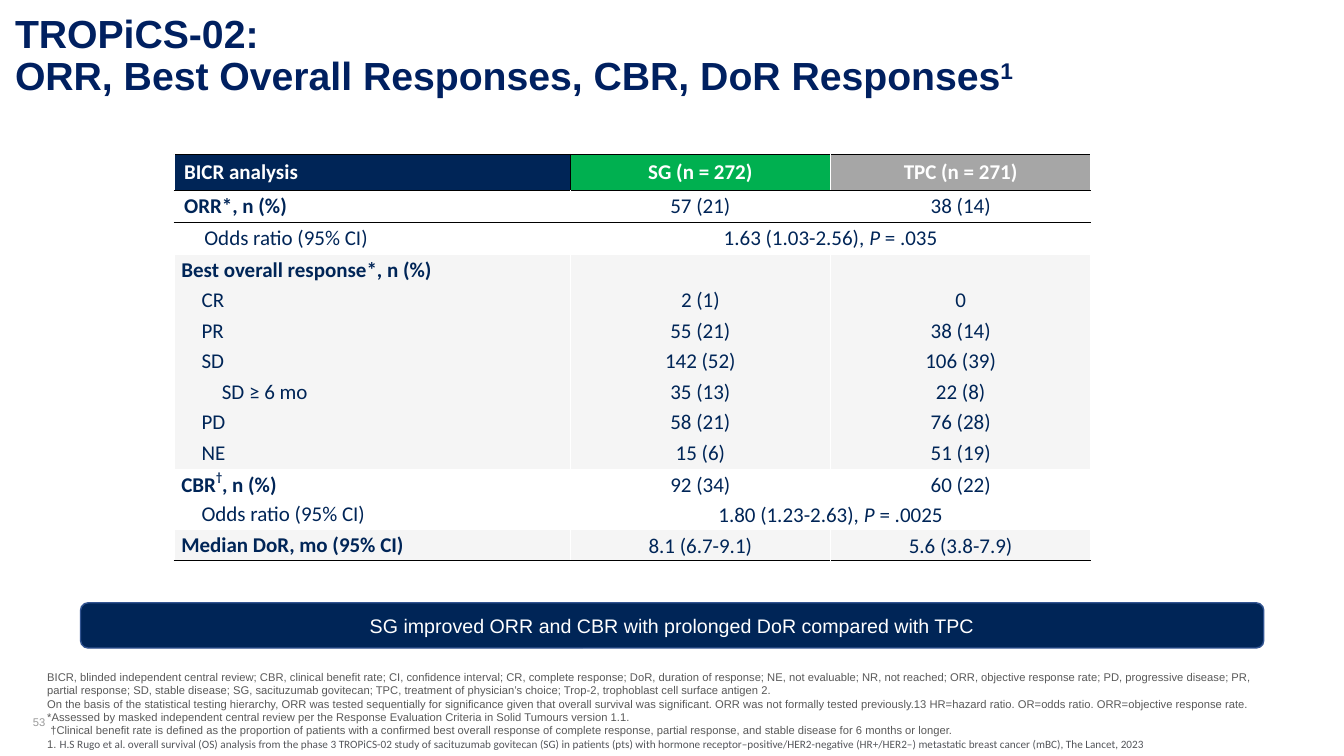
from lxml.etree import SubElement
from pptx import Presentation
from pptx.dml.color import RGBColor
from pptx.enum.shapes import MSO_SHAPE
from pptx.enum.text import MSO_ANCHOR, PP_ALIGN
from pptx.oxml.ns import qn
from pptx.util import Cm, Pt

NAVY = RGBColor(0x00, 0x25, 0x57)
TITLE_BLUE = RGBColor(0x00, 0x20, 0x60)
OUTLINE_BLUE = RGBColor(0x32, 0x54, 0x91)
GREEN = RGBColor(0x00, 0xB0, 0x50)
GRAY = RGBColor(0xA6, 0xA6, 0xA6)
PALE_GRAY = RGBColor(0xF5, 0xF5, 0xF5)
NUMBER_GRAY = RGBColor(0x99, 0x99, 0x99)
NOTE_GRAY = RGBColor(0x59, 0x59, 0x59)
CITATION_GRAY = RGBColor(0x54, 0x56, 0x5B)
WHITE = RGBColor(0xFF, 0xFF, 0xFF)
BLACK = RGBColor(0x00, 0x00, 0x00)

NO_STYLE_NO_GRID = "{2D5ABB26-0587-4C30-8999-92F81FD0307C}"
HEADER = [("BICR analysis", NAVY), ("SG (n = 272)", GREEN), ("TPC (n = 271)", GRAY)]
RESPONSES = [
    (0, WHITE, ["ORR*, n (%)"], "57 (21)", "38 (14)"),
    (1, WHITE, ["Odds ratio (95% CI)"], ("1.63 (1.03-2.56), ", "= .035"), None),
    (0, PALE_GRAY, ["Best overall response*, n (%)"], "", ""),
    (1, PALE_GRAY, ["CR"], "2 (1)", "0"),
    (1, PALE_GRAY, ["PR"], "55 (21)", "38 (14)"),
    (1, PALE_GRAY, ["SD"], "142 (52)", "106 (39)"),
    (2, PALE_GRAY, ["SD ≥ 6 mo"], "35 (13)", "22 (8)"),
    (1, PALE_GRAY, ["PD"], "58 (21)", "76 (28)"),
    (1, PALE_GRAY, ["NE"], "15 (6)", "51 (19)"),
    (0, WHITE, ["CBR", "†", ", n (%)"], "92 (34)", "60 (22)"),
    (1, WHITE, ["Odds ratio (95% CI)"], ("1.80 (1.23-2.63), ", "= .0025"), None),
    (0, PALE_GRAY, ["Median DoR, mo (95% CI)"], "8.1 (6.7-9.1)", "5.6 (3.8-7.9)"),
]
FOOTNOTES = [
    "BICR, blinded independent central review; CBR, clinical benefit rate; CI, confidence interval; "
    "CR, complete response; DoR, duration of response; NE, not evaluable; NR, not reached; "
    "ORR, objective response rate; PD, progressive disease; PR, partial response; SD, stable disease; "
    "SG, sacituzumab govitecan; TPC, treatment of physician’s choice; "
    "Trop-2, trophoblast cell surface antigen 2.",
    "On the basis of the statistical testing hierarchy, ORR was tested sequentially for significance "
    "given that overall survival was significant. ORR was not formally tested previously.13 "
    "HR=hazard ratio. OR=odds ratio. ORR=objective response rate.",
    "*Assessed by masked independent central review per the Response Evaluation Criteria "
    "in Solid Tumours version 1.1.",
    " †Clinical benefit rate is defined as the proportion of patients with a confirmed best overall "
    "response of complete response, partial response, and stable disease for 6 months or longer.",
    "1. ",
]
CITATION = (
    "H.S Rugo et al. overall survival (OS) analysis from the phase 3 TROPiCS-02 study of sacituzumab "
    "govitecan (SG) in patients (pts) with hormone receptor–positive/HER2-negative (HR+/HER2–) "
    "metastatic breast cancer (mBC), The Lancet, 2023"
)


def write(paragraph, text, size=15, font="Calibri", color=NAVY, bold=False, italic=False, baseline=0):
    """Add one formatted run to a paragraph."""
    run = paragraph.add_run()
    run.text = text
    run.font.size = Pt(size)
    run.font.name = font
    run.font.color.rgb = color
    run.font.bold = bold
    run.font.italic = italic
    if baseline:
        run.font._element.set("baseline", str(baseline * 1000))


class ResponseSlide:
    """Holds the slide and its shared style, and adds each kind of element."""

    def __init__(self, slide, font="Arial"):
        self.slide = slide
        self.font = font

    def text_box(self, left, top, width, height, anchor=MSO_ANCHOR.MIDDLE):
        box = self.slide.shapes.add_textbox(Cm(left), Cm(top), Cm(width), Cm(height))
        box.text_frame.word_wrap = True
        box.text_frame.vertical_anchor = anchor
        return box.text_frame

    def title(self, first_line, second_line, reference):
        paragraph = self.text_box(0.13, 0.46, 26.52, 1.96).paragraphs[0]
        paragraph.line_spacing = 0.9
        style = dict(size=28, font=self.font, color=TITLE_BLUE, bold=True)
        write(paragraph, first_line, **style)
        paragraph.add_line_break()
        write(paragraph, second_line, **style)
        write(paragraph, reference, baseline=30, **style)

    def page_number(self, number):
        paragraph = self.text_box(0.58, 17.78, 7.62, 0.81).paragraphs[0]
        write(paragraph, number, size=8, font=self.font, color=NUMBER_GRAY)

    def banner(self, text):
        shape = self.slide.shapes.add_shape(
            MSO_SHAPE.ROUNDED_RECTANGLE, Cm(2.03), Cm(15.19), Cm(29.82), Cm(1.14))
        shape.shadow.inherit = False
        shape.fill.solid()
        shape.fill.fore_color.rgb = NAVY
        shape.line.color.rgb = OUTLINE_BLUE
        shape.line.width = Pt(1)
        shape.text_frame.vertical_anchor = MSO_ANCHOR.MIDDLE
        paragraph = shape.text_frame.paragraphs[0]
        paragraph.alignment = PP_ALIGN.CENTER
        write(paragraph, text, size=14, font=self.font, color=WHITE)

    def cell(self, cell, fill, borders, centered, side=0.18, edge=0):
        for name, color in borders.items():
            line = SubElement(cell._tc.get_or_add_tcPr(), qn("a:" + name), w=str(Pt(1)))
            SubElement(SubElement(line, qn("a:solidFill")), qn("a:srgbClr"), val=str(color))
        cell.fill.solid()
        cell.fill.fore_color.rgb = fill
        cell.vertical_anchor = MSO_ANCHOR.MIDDLE
        cell.margin_left = cell.margin_right = Cm(side)
        cell.margin_top = cell.margin_bottom = Cm(edge)
        paragraph = cell.text_frame.paragraphs[0]
        paragraph.alignment = PP_ALIGN.CENTER if centered else PP_ALIGN.LEFT
        return paragraph

    def response_table(self):
        widths = [9.98, 6.56, 6.56]
        heights = [0.91] + [0.81] * 2 + [0.77] * 10
        frame = self.slide.shapes.add_table(
            len(heights), len(widths), Cm(4.39), Cm(3.89), Cm(sum(widths)), Cm(sum(heights)))
        table = frame.table
        table.first_row = table.horz_banding = False
        table._tbl.tblPr.find(qn("a:tableStyleId")).text = NO_STYLE_NO_GRID
        for column, width in zip(table.columns, widths):
            column.width = Cm(width)
        for row, height in zip(table.rows, heights):
            row.height = Cm(height)

        for column, (text, fill) in enumerate(HEADER):
            borders = {"lnL": BLACK if column == 1 else WHITE, "lnR": WHITE if column else BLACK,
                       "lnT": BLACK, "lnB": BLACK}
            side, edge = (0.18, 0) if column else (0.25, 0.12)
            paragraph = self.cell(table.cell(0, column), fill, borders, column > 0, side, edge)
            write(paragraph, text, color=WHITE, bold=True)

        for row, (level, fill, label, *values) in enumerate(RESPONSES, start=1):
            borders = {"lnL": WHITE, "lnR": WHITE}
            if row == 1:
                borders["lnT"] = BLACK
            if row == len(RESPONSES):
                borders["lnB"] = BLACK
            side, edge = (0.25, 0.07) if row < 3 else (0.18, 0)
            paragraph = self.cell(table.cell(row, 0), fill, borders, False, side, edge)
            paragraph._p.get_or_add_pPr().set("marL", str(Cm(0.51 * level)))
            for part in label:
                write(paragraph, part, bold=level == 0, baseline=50 if part == "†" else 0)
            if values[1] is None:
                table.cell(row, 1).merge(table.cell(row, 2))
            for column, value in enumerate(values, start=1):
                paragraph = self.cell(table.cell(row, column), fill, borders, True)
                if row >= 10:
                    paragraph.line_spacing = 1.07
                if isinstance(value, tuple):
                    write(paragraph, value[0])
                    write(paragraph, "P ", italic=True)
                    write(paragraph, value[1])
                elif value is not None:
                    write(paragraph, value)

    def footnotes(self):
        frame = self.text_box(0.94, 16.76, 31.12, 2.31, MSO_ANCHOR.TOP)
        for index, note in enumerate(FOOTNOTES):
            paragraph = frame.add_paragraph() if index else frame.paragraphs[0]
            write(paragraph, note, size=8, font=self.font, color=NOTE_GRAY)
        write(paragraph, CITATION, size=8, color=CITATION_GRAY)


def main():
    presentation = Presentation()
    presentation.slide_width = Cm(33.87)
    presentation.slide_height = Cm(19.05)
    builder = ResponseSlide(presentation.slides.add_slide(presentation.slide_layouts[6]))
    builder.title("TROPiCS-02:", "ORR, Best Overall Responses, CBR, DoR Responses", "1")
    builder.page_number("53")
    builder.banner("SG improved ORR and CBR with prolonged DoR compared with TPC")
    builder.response_table()
    builder.footnotes()
    presentation.save("out.pptx")


if __name__ == "__main__":
    main()
